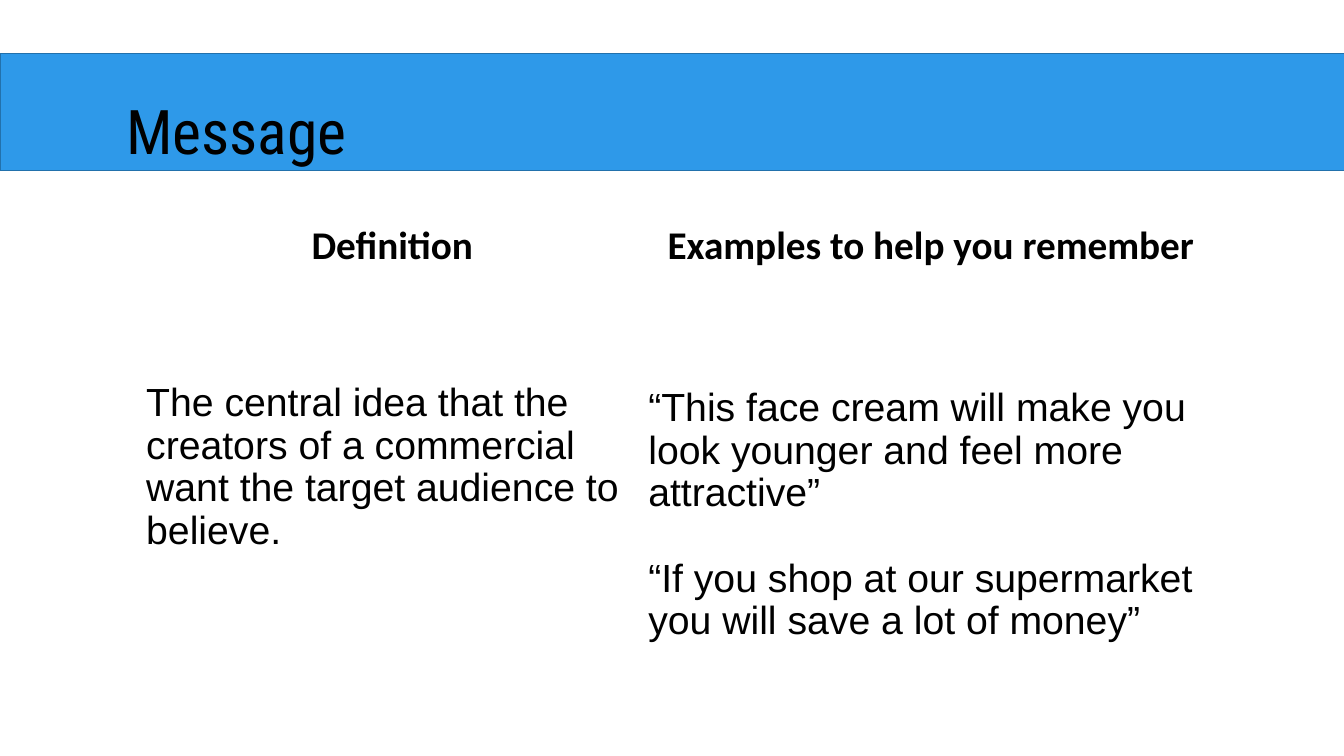
import pptx
import pptx.dml.color
import pptx.enum.shapes
import pptx.enum.text
import pptx.util

PX = 9144  # EMU per px, 100 px to the inch
ALIGN = pptx.enum.text.PP_ALIGN
ANCHOR = pptx.enum.text.MSO_ANCHOR

HEADINGS = ["Definition", "Examples to help you remember"]
DEFINITION = ["The central idea that the creators of a commercial "
              "want the target audience to believe."]
EXAMPLES = ["“This face cream will make you look younger and feel more attractive”",
            "“If you shop at our supermarket you will save a lot of money”"]


def px(n):
    return pptx.util.Emu(n * PX)


def color(value):
    return pptx.dml.color.RGBColor.from_string(value)


def format_paragraph(p, font, size, align=ALIGN.LEFT, bold=False):
    p.alignment = align
    for r in p.runs:
        r.font.name = font
        r.font.size = pptx.util.Pt(size)
        r.font.bold = bold
        r.font.color.rgb = color("000000")


def add_band(slide, x, y, w, h):
    sp = slide.shapes.add_shape(pptx.enum.shapes.MSO_SHAPE.RECTANGLE,
                                px(x), px(y), px(w), px(h))
    sp.shadow.inherit = False
    sp.fill.solid()
    sp.fill.fore_color.rgb = color("2E99E9")
    sp.line.color.rgb = color("2271AC")
    sp.line.width = pptx.util.Pt(1)
    # Send the band behind the title
    slide.shapes._spTree.insert(2, sp._element)


def set_title(slide, text, x, y, w, h):
    sp = slide.shapes.title
    sp.left, sp.top, sp.width, sp.height = px(x), px(y), px(w), px(h)
    tf = sp.text_frame
    tf.text = text
    tf.vertical_anchor = ANCHOR.MIDDLE
    format_paragraph(tf.paragraphs[0], "Roboto Condensed", 44)


def add_grid(slide, x, y, cols, rows):
    frame = slide.shapes.add_table(len(rows), len(cols), px(x), px(y),
                                   px(sum(cols)), px(sum(rows)))
    table = frame.table
    table.first_row = table.horz_banding = False
    for col, width in zip(table.columns, cols):
        col.width = px(width)
    for row, height in zip(table.rows, rows):
        row.height = px(height)
    for cell in table.iter_cells():
        cell.fill.background()
        cell.margin_left = cell.margin_right = px(5)
        cell.margin_top = cell.margin_bottom = 0
    return table


def fill_heading(cell, text):
    cell.text = text
    format_paragraph(cell.text_frame.paragraphs[0], "Calibri", 28, ALIGN.CENTER, True)


def fill_body(cell, texts, anchor, top=0):
    cell.vertical_anchor = anchor
    cell.margin_top = px(top)
    tf = cell.text_frame
    for i, text in enumerate(texts):
        p = tf.add_paragraph() if i else tf.paragraphs[0]
        p.text = text
        p.line_spacing = 0.97
        p.space_before = pptx.util.Pt(31 if i else 0)
        format_paragraph(p, "Arial", 28)


def main():
    prs = pptx.Presentation()
    prs.slide_width, prs.slide_height = px(1333), px(750)
    slide = prs.slides.add_slide(prs.slide_layouts[5])

    # Title on its band
    add_band(slide, 0, 53, 1339, 116)
    set_title(slide, "Message", 115, 81, 988, 96)

    # Definition and examples, after a narrow empty column
    table = add_grid(slide, 125, 220, [15, 498, 570], [117, 349])
    for col, heading in enumerate(HEADINGS, start=1):
        fill_heading(table.cell(0, col), heading)
    fill_body(table.cell(1, 1), DEFINITION, ANCHOR.TOP, top=43)
    fill_body(table.cell(1, 2), EXAMPLES, ANCHOR.MIDDLE)

    prs.save("out.pptx")


if __name__ == "__main__":
    main()
